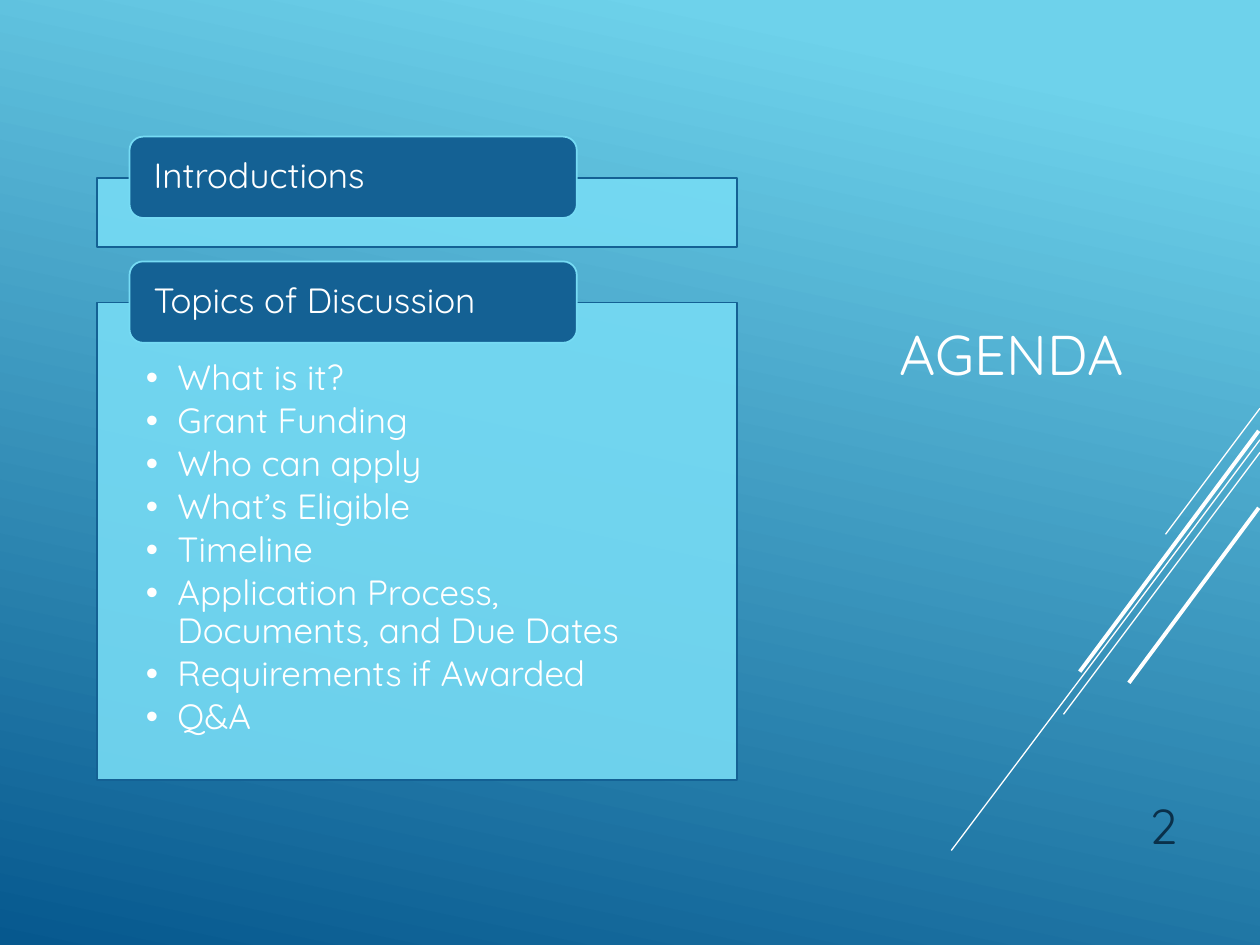
from lxml.etree import SubElement as Sub
from pptx import Presentation
from pptx.dml.color import RGBColor
from pptx.enum.shapes import MSO_CONNECTOR as Conn, MSO_SHAPE as Form
from pptx.enum.text import MSO_ANCHOR as Anchor, MSO_AUTO_SIZE as Auto, PP_ALIGN as Align
from pptx.oxml.ns import qn
from pptx.util import Pt

SKY = RGBColor(0x6E, 0xD2, 0xEB)
DEEP = RGBColor(0x06, 0x58, 0x8E)
PALE = RGBColor(0x76, 0xDB, 0xF4)
BLUE = RGBColor(0x14, 0x61, 0x94)
NAVY = RGBColor(0x0A, 0x30, 0x4A)
WHITE = RGBColor(0xFF, 0xFF, 0xFF)
FONT = "Quicksand"

TOPICS = ["What is it?", "Grant Funding", "Who can apply", "What’s Eligible", "Timeline",
          "Application Process, Documents, and Due Dates", "Requirements if Awarded", "Q&A"]
PANELS = [("Introductions", 101.5, 39.5), ("Topics of Discussion", 172.8, 272.9)]
RAYS = [(720, 233.3, 666, 305.3, 0.75), (720, 251.3, 543.6, 486, 0.75),
        (720, 258.5, 607.7, 408.2, 0.75), (719.3, 246.2, 617, 383.8, 2.25),
        (719.3, 290.2, 645.1, 390.2, 2.25)]


def place(item, x, y, w, h):
    """Set the place and size of an item."""
    item.left, item.top, item.width, item.height = Pt(x), Pt(y), Pt(w), Pt(h)


def frame(item, anchor, pads):
    """Set up the text frame of an item and return it."""
    text = item.text_frame
    text.word_wrap, text.auto_size = True, Auto.NONE
    text.vertical_anchor = anchor
    text.margin_left, text.margin_top, text.margin_right, text.margin_bottom = map(Pt, pads)
    return text


def write(par, words, size, color=WHITE, align=Align.LEFT):
    """Add one formatted run to a paragraph."""
    par.alignment = align
    run = par.add_run()
    run.text = words
    run.font.name, run.font.size = FONT, Pt(size)
    run.font.color.rgb = color


def block(slide, form, box, fill, edge=None):
    """Add a filled shape without shadow."""
    shape = slide.shapes.add_shape(form, *map(Pt, box))
    shape.shadow.inherit = False
    if edge is None:
        shape.line.fill.background()
    else:
        shape.line.color.rgb, shape.line.width = edge, Pt(1)
    if fill is not None:
        shape.fill.solid()
        shape.fill.fore_color.rgb = fill
    return shape


def wash(slide):
    """Cover the slide with the blue gradient."""
    fill = block(slide, Form.RECTANGLE, (0, 0, 720, 540), None).fill
    fill.gradient()
    fill.gradient_angle = 258
    for stop, color, pos in zip(fill.gradient_stops, (SKY, DEEP), (0.1, 1)):
        stop.color.rgb, stop.position = color, pos


def ray(slide, x1, y1, x2, y2, width):
    """Add one white slanted line."""
    line = slide.shapes.add_connector(Conn.STRAIGHT, Pt(x1), Pt(y1), Pt(x2), Pt(y2))
    line.line.color.rgb, line.line.width = WHITE, Pt(width)
    Sub(line.element.spPr, qn("a:effectLst"))


def panel(slide, label, top, high):
    """Add a pale panel with its heading tab."""
    back = block(slide, Form.RECTANGLE, (55.4, top, 365.8, high), PALE, BLUE)
    tint = back.element.spPr.find(qn("a:solidFill"))[0]
    Sub(tint, qn("a:alpha"), val="90000")
    tab = block(slide, Form.ROUNDED_RECTANGLE, (74, top - 23.4, 255.6, 46.5), BLUE, PALE)
    par = frame(tab, Anchor.MIDDLE, (11.5, 0, 11.5, 0)).paragraphs[0]
    par.line_spacing = 0.9
    write(par, label, 20)


def topics(slide, body):
    """Fill the body with the bulleted topics."""
    slide.shapes.element.append(body.element)
    place(body, 55.4, 172.8, 365.8, 272.9)
    text = frame(body, Anchor.TOP, (28, 33.1, 28, 11.5))
    for i, topic in enumerate(TOPICS):
        par = text.add_paragraph() if i else text.paragraphs[0]
        par.line_spacing, par.space_before, par.space_after = 0.9, Pt(0), Pt(3)
        write(par, topic, 20)
        props = par._p.get_or_add_pPr()
        props.set("marL", str(Pt(18)))
        props.set("indent", str(-Pt(18)))
        Sub(props, qn("a:buChar"), char="•")


def head(slide, title):
    """Place and write the title."""
    slide.shapes.element.append(title.element)
    place(title, 506.9, 74.2, 180, 255.6)
    write(frame(title, Anchor.MIDDLE, (7.2, 3.6, 7.2, 3.6)).paragraphs[0], "AGENDA", 32)


def number(slide):
    """Add the slide number."""
    box = slide.shapes.add_textbox(Pt(612), Pt(439.2), Pt(67.7), Pt(52.6))
    par = frame(box, Anchor.BOTTOM, (7.2, 3.6, 7.2, 3.6)).paragraphs[0]
    par.space_after = Pt(6)
    write(par, "2", 28, NAVY, Align.RIGHT)


def main():
    """Build and save the agenda slide."""
    deck = Presentation()
    deck.slide_width, deck.slide_height = Pt(720), Pt(540)
    slide = deck.slides.add_slide(deck.slide_layouts[1])
    title, body = slide.placeholders
    wash(slide)
    number(slide)
    for spec in RAYS:
        ray(slide, *spec)
    head(slide, title)
    for spec in PANELS:
        panel(slide, *spec)
    topics(slide, body)
    deck.save("out.pptx")


if __name__ == "__main__":
    main()
